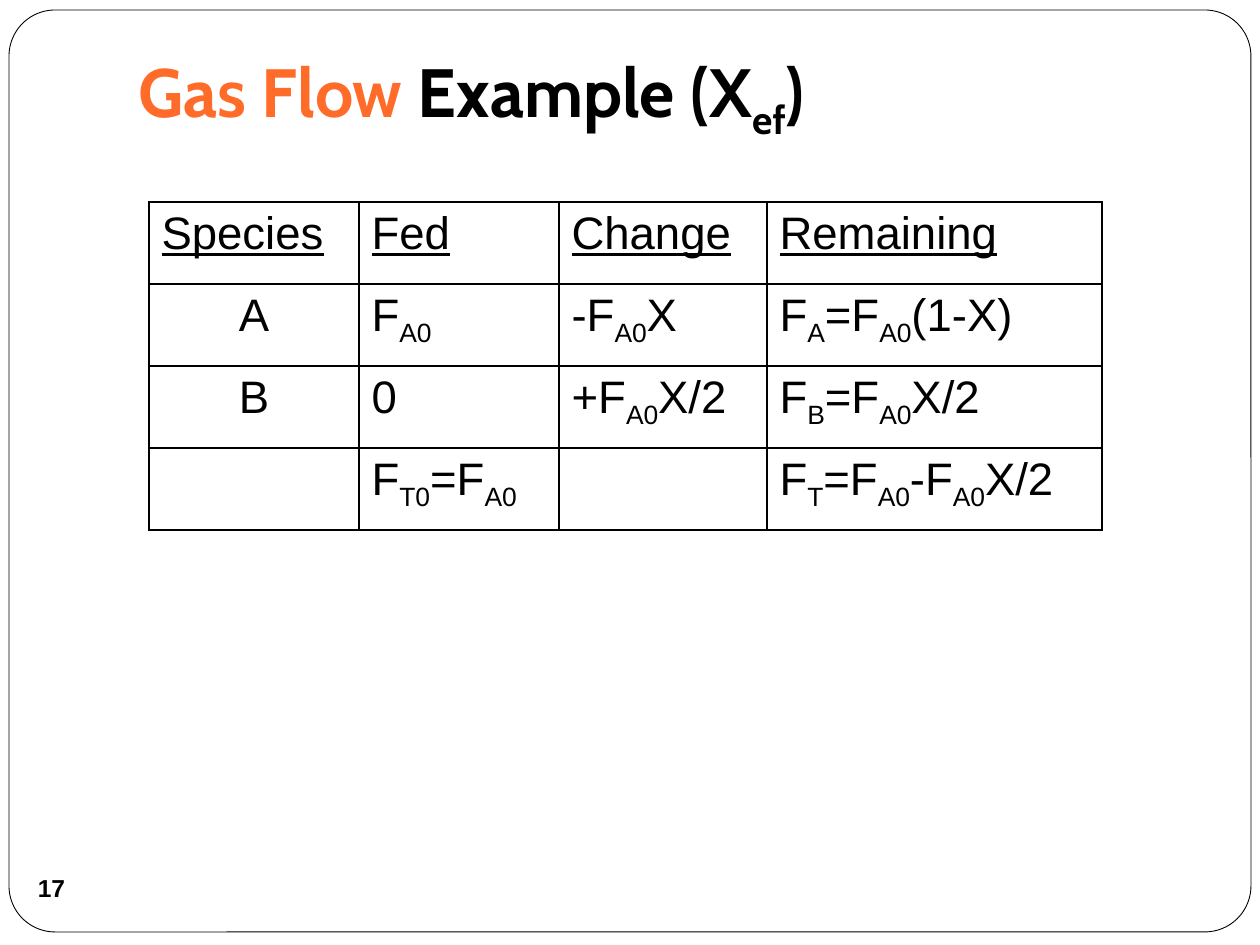
from lxml import etree
from pptx import Presentation
from pptx.dml.color import RGBColor
from pptx.enum.shapes import MSO_SHAPE
from pptx.enum.text import MSO_ANCHOR, PP_ALIGN
from pptx.oxml.ns import qn
from pptx.util import Pt

ROUND_RECT, OVAL = MSO_SHAPE.ROUNDED_RECTANGLE, MSO_SHAPE.OVAL
MIDDLE, CENTER, LEFT = MSO_ANCHOR.MIDDLE, PP_ALIGN.CENTER, PP_ALIGN.LEFT

# Content: text between ~ marks is subscript
TITLE = [("Gas Flow ", "accent"), ("Example (X~ef~)", "ink")]
ROWS = [
    ["Species", "Fed", "Change", "Remaining"],
    ["A", "F~A0~", "-F~A0~X", "F~A~=F~A0~(1-X)"],
    ["B", "0", "+F~A0~X/2", "F~B~=F~A0~X/2"],
    ["", "F~T0~=F~A0~", "", "F~T~=F~A0~-F~A0~X/2"],
]
PAGE = "17"

# Layout in px
SCALE = 914400 / 126
SLIDE = (1260, 945)
FRAME = (9, 10, 1242, 922)
TITLE_BOX = (126, 38, 1071, 115)
PAGE_BOX = (20, 856, 63, 63)
TABLE_AT = (149, 202)
COLS = [210, 200, 208, 335]
ROW_H = 82

THEME = {
    "ink": "000000", "paper": "FFFFFF", "accent": "FF6B28",
    "title_font": "Cabin", "body_font": "Arial",
    "title": 39, "body": 26, "page": 14, "frame_line": 0.5, "border": 1,
}


def px(n):
    return round(n * SCALE)


def color(name):
    return RGBColor.from_string(THEME[name])


def add_text(p, text, size, font, ink="ink", bold=False, underline=False):
    for i, part in enumerate(text.split("~")):
        if not part:
            continue
        r = p.add_run()
        r.text = part
        r.font.size, r.font.name = Pt(THEME[size]), THEME[font]
        r.font.bold, r.font.underline = bold, underline
        r.font.color.rgb = color(ink)
        if i % 2:
            r.font._element.set("baseline", "-25000")


def add_panel(slide, kind, box):
    sp = slide.shapes.add_shape(kind, *map(px, box))
    sp.shadow.inherit = False
    sp.fill.solid()
    sp.fill.fore_color.rgb = color("paper")
    return sp


def set_borders(cell):
    tc_pr = cell._tc.get_or_add_tcPr()
    for i, side in enumerate(("lnL", "lnR", "lnT", "lnB")):
        ln = etree.Element(qn(f"a:{side}"), w=str(Pt(THEME["border"])))
        fill = etree.SubElement(ln, qn("a:solidFill"))
        etree.SubElement(fill, qn("a:srgbClr"), val=THEME["ink"])
        tc_pr.insert(i, ln)


prs = Presentation()
prs.slide_width, prs.slide_height = map(px, SLIDE)
slide = prs.slides.add_slide(prs.slide_layouts[6])

# Rounded frame
frame = add_panel(slide, ROUND_RECT, FRAME)
frame.adjustments[0] = 0.05
frame.line.color.rgb = color("ink")
frame.line.width = Pt(THEME["frame_line"])

# Page number
badge = add_panel(slide, OVAL, PAGE_BOX)
badge.line.fill.background()
tf = badge.text_frame
tf.margin_left = tf.margin_right = tf.margin_top = tf.margin_bottom = 0
tf.word_wrap, tf.vertical_anchor = False, MIDDLE
tf.paragraphs[0].alignment = CENTER
add_text(tf.paragraphs[0], PAGE, "page", "body_font", bold=True)

# Species table
size = (sum(COLS), ROW_H * len(ROWS))
table = slide.shapes.add_table(len(ROWS), len(COLS), *map(px, TABLE_AT + size)).table
table.first_row = table.horz_banding = False
for col, width in zip(table.columns, COLS):
    col.width = px(width)
for i, row in enumerate(ROWS):
    table.rows[i].height = px(ROW_H)
    for j, text in enumerate(row):
        cell = table.cell(i, j)
        cell.fill.background()
        set_borders(cell)
        p = cell.text_frame.paragraphs[0]
        p.alignment = CENTER if i and j == 0 else LEFT
        add_text(p, text, "body", "body_font", underline=i == 0)

# Title
tf = slide.shapes.add_textbox(*map(px, TITLE_BOX)).text_frame
tf.word_wrap, tf.vertical_anchor = True, MIDDLE
for text, ink in TITLE:
    add_text(tf.paragraphs[0], text, "title", "title_font", ink, bold=True)

prs.save("out.pptx")
